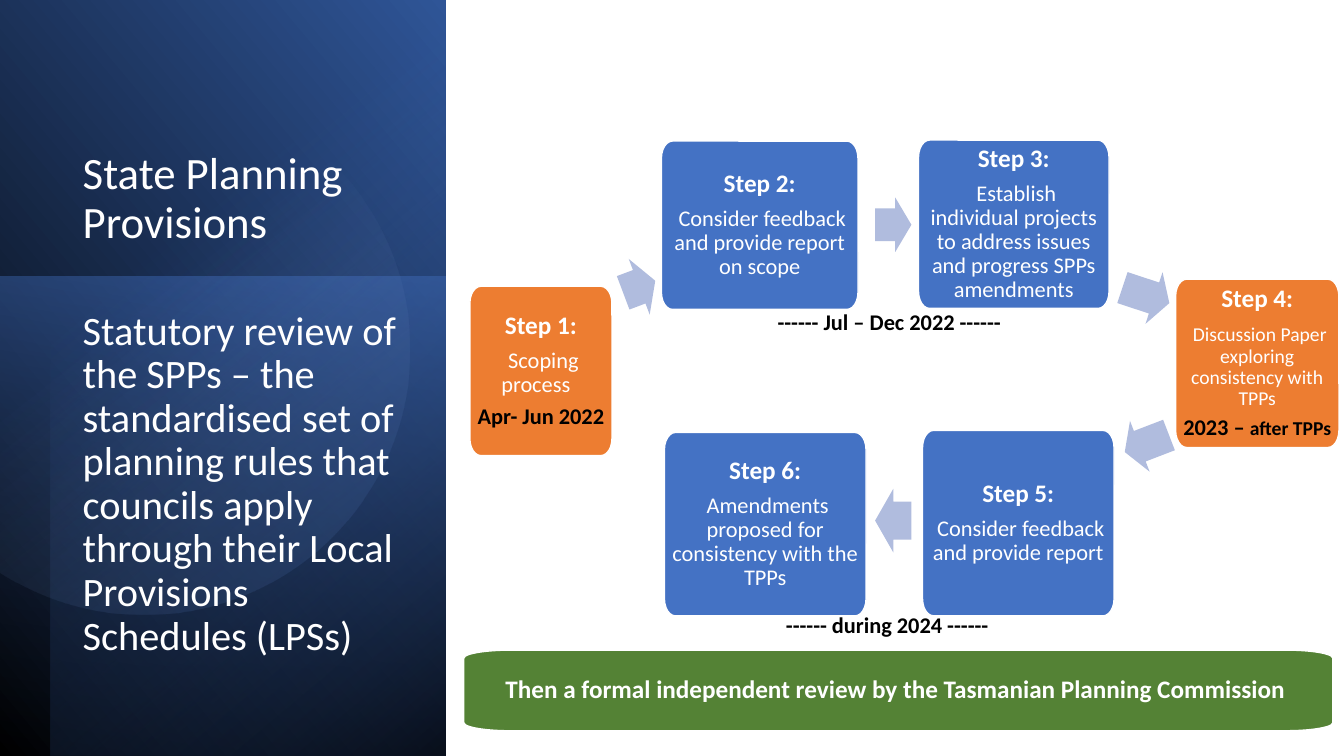
from dataclasses import dataclass
from math import acos, degrees, sqrt

from pptx import Presentation
from pptx.dml.color import RGBColor
from pptx.enum.shapes import MSO_SHAPE
from pptx.enum.text import MSO_ANCHOR, MSO_AUTO_SIZE, PP_ALIGN
from pptx.oxml import parse_xml
from pptx.oxml.ns import nsdecls, qn
from pptx.util import Inches, Pt


@dataclass(frozen=True)
class Theme:
    font: str = "Calibri"
    white: str = "FFFFFF"
    black: str = "000000"
    blue: str = "4472C4"
    deep_blue: str = "2F5597"
    navy: str = "203864"
    pale_blue: str = "8FAADC"
    orange: str = "ED7D31"
    green: str = "548235"
    arrow: str = "B0BCDE"
    subtitle: float = 32
    title: float = 28.8
    heading: float = 18
    body: float = 16
    small: float = 14


T = Theme()


@dataclass(frozen=True)
class Box:
    x: float
    y: float
    w: float
    h: float

    def lengths(self) -> tuple:
        return tuple(Inches(v) for v in (self.x, self.y, self.w, self.h))


@dataclass(frozen=True)
class Stop:
    pos: int
    color: str
    alpha: int = 100


@dataclass(frozen=True)
class Panel:
    box: Box
    rotation: int
    flip: bool
    angle: float
    stops: tuple[Stop, ...]


@dataclass(frozen=True)
class Node:
    """A corner of an outline; a sweep makes the edge that reaches it an arc."""
    x: float
    y: float
    start: float = 0
    sweep: float = 0


@dataclass(frozen=True)
class Step:
    box: Box
    fill: str
    heading: str
    body: str
    body_size: float = T.body
    date: str = ""
    date_note: str = ""


@dataclass(frozen=True)
class Arrow:
    box: Box
    rotation: float
    head: float
    kind: MSO_SHAPE = MSO_SHAPE.RIGHT_ARROW


PANELS = (
    Panel(Box(-1.55, 1.55, 7.52, 4.42), 90, True, 310,
          (Stop(0, T.black), Stop(100, T.deep_blue))),
    Panel(Box(-0.17, 2.91, 4.76, 4.42), 270, False, 190,
          (Stop(0, T.blue, 50), Stop(100, T.navy, 0))),
    Panel(Box(-1.29, 1.79, 7.5, 3.92), 270, True, 220,
          (Stop(0, T.black, 59), Stop(69, T.blue, 0))),
)
STEPS = (
    Step(Box(4.66, 2.84, 1.41, 1.68), T.orange, "Step 1:", "Scoping process  ",
         date="Apr- Jun 2022"),
    Step(Box(6.56, 1.4, 1.95, 1.67), T.blue, "Step 2:",
         "Consider feedback and provide report on scope"),
    Step(Box(9.11, 1.39, 1.89, 1.67), T.blue, "Step 3:",
         "Establish individual projects to address issues and progress SPPs amendments"),
    Step(Box(11.66, 2.77, 1.62, 1.67), T.orange, "Step 4:",
         "Discussion Paper exploring consistency with TPPs", T.small,
         "2023 – ", "after TPPs"),
    Step(Box(9.15, 4.27, 1.9, 1.84), T.blue, "Step 5:",
         "Consider feedback and provide report"),
    Step(Box(6.59, 4.29, 2, 1.82), T.blue, "Step 6:",
         "Amendments proposed for consistency with the TPPs"),
)
ARROWS = (
    Arrow(Box(6.17, 2.55, 0.34, 0.59), -20.6, 0.17),
    Arrow(Box(8.68, 1.96, 0.36, 0.54), 0, 0.16),
    Arrow(Box(11.12, 2.66, 0.49, 0.54), 18.3, 0.16),
    Arrow(Box(11.14, 4.13, 0.47, 0.54), -21.1, 0.16, MSO_SHAPE.LEFT_ARROW),
    Arrow(Box(8.68, 4.85, 0.36, 0.63), 0, 0.18, MSO_SHAPE.LEFT_ARROW),
)
PERIODS = (
    (Box(5.49, 3.04, 6.66, 0.34), "------ Jul – Dec 2022 ------"),
    (Box(5.47, 6.04, 6.66, 0.34), "------ during 2024 ------"),
)


def write(p, text: str, *, size: float, color: str = T.white, bold: bool = False,
          align=PP_ALIGN.CENTER, before: float = 0, after: float | None = None) -> None:
    """Add a run to p; the space after defaults to 35% of the type size."""
    p.alignment, p.line_spacing = align, 0.9
    p.space_before = Pt(before)
    p.space_after = Pt(0.35 * size if after is None else after)
    r = p.add_run()
    r.text = text
    r.font.name, r.font.size, r.font.bold = T.font, Pt(size), bold
    r.font.color.rgb = RGBColor.from_string(color)


def paint(sp, color: str) -> None:
    sp.shadow.inherit = False
    sp.fill.solid()
    sp.fill.fore_color.rgb = RGBColor.from_string(color)
    sp.line.fill.background()


def paint_gradient(sp, angle: float, stops: tuple[Stop, ...]) -> None:
    sp.shadow.inherit = False
    sp.line.fill.background()
    sp.fill.background()
    gs = "".join(
        f'<a:gs pos="{g.pos * 1000}"><a:srgbClr val="{g.color}">'
        f'<a:alpha val="{g.alpha * 1000}"/></a:srgbClr></a:gs>' for g in stops)
    grad = parse_xml(f'<a:gradFill {nsdecls("a")} rotWithShape="1"><a:gsLst>{gs}</a:gsLst>'
                     f'<a:lin ang="{round(angle * 60000)}" scaled="0"/></a:gradFill>')
    spPr = sp._element.spPr
    spPr.replace(spPr.find(qn("a:noFill")), grad)


def add_outline(s, nodes: list[Node], rx: float, ry: float):
    """Draw a closed outline whose arcs all have the radii rx and ry."""
    pts = [(Inches(n.x), Inches(n.y)) for n in nodes]
    builder = s.shapes.build_freeform(*pts[0])
    builder.add_line_segments(pts[1:], close=True)
    sp = builder.convert_to_shape()
    edges = list(sp._element.iter(qn("a:lnTo")))
    for edge, n in zip(edges, nodes[1:]):
        if n.sweep:
            edge.getparent().replace(edge, parse_xml(
                f'<a:arcTo {nsdecls("a")} wR="{Inches(rx)}" hR="{Inches(ry)}" '
                f'stAng="{round(n.start * 60000)}" swAng="{round(n.sweep * 60000)}"/>'))
    return sp


def add_card(s, box: Box, color: str, rx: float = 0.11, ry: float = 0.17):
    """Draw a box with elliptical corners and return its text frame."""
    x, y, right, bottom = box.x, box.y, box.x + box.w, box.y + box.h
    nodes = [Node(x, y + ry), Node(x + rx, y, 180, 90),
             Node(right - rx, y), Node(right, y + ry, 270, 90),
             Node(right, bottom - ry), Node(right - rx, bottom, 0, 90),
             Node(x + rx, bottom), Node(x, bottom - ry, 90, 90)]
    sp = add_outline(s, nodes, rx, ry)
    paint(sp, color)
    sp.line.color.rgb = RGBColor.from_string(T.white)
    sp.line.width = Pt(1)
    tf = sp.text_frame
    tf.word_wrap, tf.vertical_anchor = True, MSO_ANCHOR.MIDDLE
    tf.margin_left = tf.margin_right = tf.margin_top = tf.margin_bottom = Inches(0.07)
    return tf


def add_step(s, step: Step) -> None:
    tf = add_card(s, step.box, step.fill)
    write(tf.paragraphs[0], step.heading, size=T.heading, bold=True)
    p = tf.add_paragraph()
    write(p, " ", size=T.body)
    write(p, step.body, size=step.body_size)
    if step.date:
        p = tf.add_paragraph()
        write(p, step.date, size=T.body, color=T.black, bold=True)
        if step.date_note:
            write(p, step.date_note, size=T.small, color=T.black, bold=True)


def add_arrow(s, arrow: Arrow) -> None:
    sp = s.shapes.add_shape(arrow.kind, *arrow.box.lengths())
    sp.adjustments[0] = 0.6
    sp.adjustments[1] = arrow.head / min(arrow.box.w, arrow.box.h)
    sp.rotation = arrow.rotation
    paint(sp, T.arrow)


def add_side_panel(s) -> None:
    for panel in PANELS:
        sp = s.shapes.add_shape(MSO_SHAPE.RECTANGLE, *panel.box.lengths())
        sp.rotation = panel.rotation
        if panel.flip:
            sp._element.spPr.xfrm.set("flipH", "1")
        paint_gradient(sp, panel.angle, panel.stops)
    cx, cy, radius = 1.43, 3.47, 2.63
    rise, cut = sqrt(radius**2 - cx**2), degrees(acos(-cx / radius))
    nodes = [Node(0, cy - rise), Node(cx, cy - radius, 360 - cut, cut - 90),
             Node(cx + radius, cy, 270, 90), Node(cx, cy + radius, 0, 90),
             Node(0, cy + rise, 90, cut - 90)]
    paint_gradient(add_outline(s, nodes, radius, radius), 51.6,
                   (Stop(39, T.pale_blue, 0), Stop(100, T.deep_blue, 26)))


def fill_placeholder(s, ph, box: Box, anchor, text: str, size: float, before: float) -> None:
    """Place a placeholder in front of the shapes drawn so far and write its text."""
    s.shapes._spTree.append(ph._element)
    ph.left, ph.top, ph.width, ph.height = box.lengths()
    tf = ph.text_frame
    tf.word_wrap, tf.auto_size, tf.vertical_anchor = True, MSO_AUTO_SIZE.NONE, anchor
    write(tf.paragraphs[0], text, size=size, align=PP_ALIGN.LEFT, before=before, after=0)


def main() -> None:
    prs = Presentation()
    prs.slide_width, prs.slide_height = Inches(13.33), Inches(7.5)
    s = prs.slides.add_slide(prs.slide_layouts[0])
    add_side_panel(s)
    fill_placeholder(s, s.placeholders[1], Box(0.72, 0.88, 3.4, 1.63), MSO_ANCHOR.BOTTOM,
                     "State Planning Provisions", T.subtitle, 10)
    fill_placeholder(s, s.shapes.title, Box(0.72, 3.03, 3.46, 3.55), MSO_ANCHOR.TOP,
                     "Statutory review of the SPPs – the standardised set of planning rules "
                     "that councils apply through their Local Provisions Schedules (LPSs)",
                     T.title, 0)
    for step in STEPS:
        add_step(s, step)
    for arrow in ARROWS:
        add_arrow(s, arrow)
    banner = add_card(s, Box(4.6, 6.45, 8.62, 0.8), T.green, rx=0.46, ry=0.08)
    write(banner.paragraphs[0],
          "Then a formal independent review by the Tasmanian Planning Commission ",
          size=T.heading, bold=True)
    for box, text in PERIODS:
        tf = s.shapes.add_textbox(*box.lengths()).text_frame
        tf.word_wrap, tf.auto_size = True, MSO_AUTO_SIZE.SHAPE_TO_FIT_TEXT
        write(tf.paragraphs[0], text, size=T.body, color=T.black, bold=True)
    prs.save("out.pptx")


if __name__ == "__main__":
    main()
